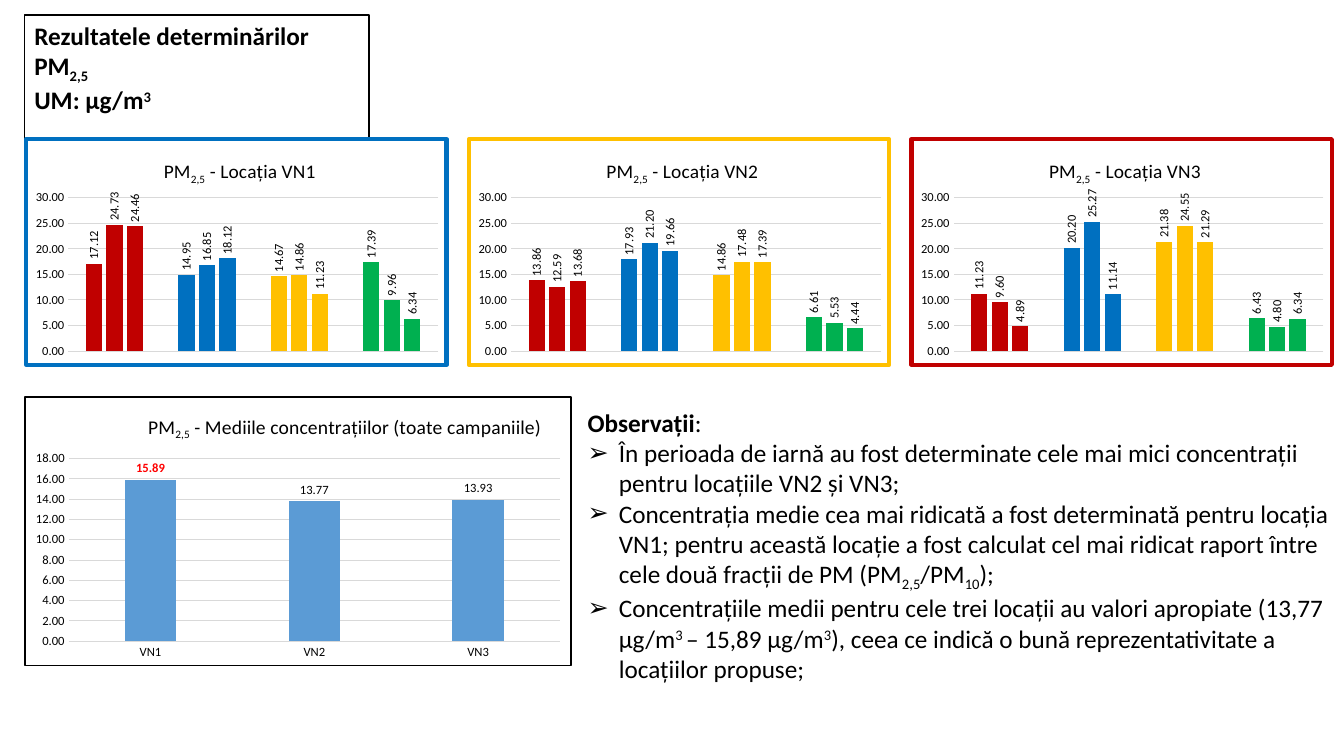
from lxml import etree
from pptx import Presentation
from pptx.chart.data import CategoryChartData
from pptx.dml.color import RGBColor
from pptx.enum import chart as charts, text
from pptx.oxml import parse_xml
from pptx.oxml.ns import nsdecls, qn
from pptx.util import Inches, Pt

BLACK, WHITE, GRID = "000000", "FFFFFF", "D9D9D9"
RED, BLUE, YELLOW, GREEN = CAMPAIGN_COLOURS = ("C00000", "0070C0", "FFC000", "00B050")
BAR = "5B9BD5"
SUB, SUPER = -25, 30
PM25 = ["PM", ("2,5", SUB)]


def colour(value):
    return RGBColor.from_string(value)


def format_font(font, size=18, bold=False, color=BLACK, name="Calibri"):
    font.size, font.bold, font.name = Pt(size), bold, name
    font.color.rgb = colour(color)


def write(para, parts, **style):
    """Add spans to a paragraph; a part is text or (text, baseline percent)."""
    for part in parts:
        words, baseline = (part, 0) if isinstance(part, str) else part
        span = para.add_run()
        span.text = words
        format_font(span.font, **style)
        if baseline:
            span._r.get_or_add_rPr().set("baseline", str(baseline * 1000))


def place(parent, before, **fractions):
    """Give a chart part a manual layout, in fractions of the chart."""
    for old in parent.findall(qn("c:layout")):
        parent.remove(old)
    layout = parse_xml(f"<c:layout {nsdecls('c')}><c:manualLayout/></c:layout>")
    settings = {"xMode": "edge", "yMode": "edge", **fractions}
    if "w" in fractions:
        settings = {"layoutTarget": "inner", **settings}
    for tag, value in settings.items():
        etree.SubElement(layout[0], qn(f"c:{tag}")).set("val", str(value))
    if before is None:
        parent.insert(0, layout)
    else:
        before.addnext(layout)


class Slide:
    def __init__(self, deck):
        self.page = deck.slides.add_slide(deck.slide_layouts[5])

    def title(self, bounds, lines):
        box = self.page.shapes.title
        box.left, box.top, box.width, box.height = map(Inches, bounds)
        box.fill.solid()
        box.fill.fore_color.rgb = colour(WHITE)
        box.line.color.rgb = colour(BLACK)
        box.line.width = Pt(1)
        self.fill_frame(box.text_frame, lines, bold=True)

    def fill_frame(self, frame, lines, **style):
        frame.word_wrap = True
        frame.auto_size = text.MSO_AUTO_SIZE.SHAPE_TO_FIT_TEXT
        frame.vertical_anchor = text.MSO_ANCHOR.TOP
        for index, parts in enumerate(lines):
            para = frame.add_paragraph() if index else frame.paragraphs[0]
            para.alignment = text.PP_ALIGN.LEFT
            write(para, parts, **style)

    def bullet_box(self, bounds, heading, items):
        box = self.page.shapes.add_textbox(*map(Inches, bounds))
        self.fill_frame(box.text_frame, [[], *items])
        first, *bullets = box.text_frame.paragraphs
        write(first, [heading], bold=True)
        write(first, [":"])
        for para in bullets:
            props = para._p.get_or_add_pPr()
            props.set("marL", str(Inches(0.31)))
            props.set("indent", str(-Inches(0.31)))
            etree.SubElement(props, qn("a:buFont")).set("typeface", "Calibri")
            etree.SubElement(props, qn("a:buChar")).set("char", "➢")

    def column_chart(self, bounds, title, categories, rows, border, border_width,
                     title_at, plot_at, top, step):
        data = CategoryChartData(number_format="0.00")
        data.categories = categories
        for number, row in enumerate(rows, 1):
            data.add_series(f"Series {number}", row)
        frame = self.page.shapes.add_chart(
            charts.XL_CHART_TYPE.COLUMN_CLUSTERED, *map(Inches, bounds), data)
        chart = frame.chart
        format_font(chart.font, size=10)
        chart.has_legend = False
        write(chart.chart_title.text_frame.paragraphs[0], title, size=14)
        chart.chart_title.include_in_layout = False

        plot = chart.plots[0]
        plot.gap_width, plot.overlap, plot.vary_by_categories = 219, -27, False
        for series in plot.series:
            series.format.fill.solid()
            series.format.fill.fore_color.rgb = colour(BAR)
            labels = series.data_labels
            labels.show_value = True
            labels.number_format, labels.number_format_is_linked = "#,##0.00", False
            labels.position = charts.XL_LABEL_POSITION.OUTSIDE_END
            format_font(labels.font, size=9)

        for axis in (chart.category_axis, chart.value_axis):
            axis.major_tick_mark = axis.minor_tick_mark = charts.XL_TICK_MARK.NONE
            format_font(axis.tick_labels.font, size=9)
        values = chart.value_axis
        values.minimum_scale, values.maximum_scale, values.major_unit = 0, top, step
        values.tick_labels.number_format = "0.00"
        values.tick_labels.number_format_is_linked = False
        values.format.line.fill.background()
        for line in (values.major_gridlines.format.line, chart.category_axis.format.line):
            line.color.rgb = colour(GRID)
            line.width = Pt(0.75)

        body = chart.element.find(qn("c:chart"))
        heading = body.find(qn("c:title"))
        place(heading, heading.find(qn("c:tx")), **dict(zip("xy", title_at)))
        place(body.find(qn("c:plotArea")), None, **dict(zip("xywh", plot_at)))
        body.addnext(parse_xml(
            f'<c:spPr {nsdecls("c", "a")}>'
            f'<a:solidFill><a:srgbClr val="{WHITE}"/></a:solidFill>'
            f'<a:ln w="{Pt(border_width)}"><a:solidFill><a:srgbClr val="{border}"/>'
            '</a:solidFill></a:ln></c:spPr>'))
        return chart

    def campaign_chart(self, bounds, location, rows, border):
        """Chart of one location: a colour per campaign and upright labels."""
        chart = self.column_chart(
            bounds, [*PM25, f" - Locația {location}"], ["1", "2", "3", "4"], rows,
            border, 3, (0.32, 0.07), (0.1, 0.26, 0.88, 0.68), top=30, step=5)
        chart.category_axis.visible = False
        for series in chart.plots[0].series:
            for index, shade in enumerate(CAMPAIGN_COLOURS):
                fill = series.points[index].format.fill
                fill.solid()
                fill.fore_color.rgb = colour(shade)
        for body in chart.element.xpath(".//c:dLbls/c:txPr/a:bodyPr"):
            body.set("rot", "-5400000")
            body.set("vert", "horz")

    def mean_chart(self, bounds, locations, means):
        chart = self.column_chart(
            bounds, [*PM25, " - Mediile concentrațiilor (toate campaniile)"],
            locations, [means], BLACK, 1, (0.22, 0.05), (0.08, 0.23, 0.9, 0.68),
            top=18, step=2)
        highest = chart.plots[0].series[0].points[means.index(max(means))].data_label
        format_font(highest.font, size=9, bold=True, color="FF0000")
        highest.position = charts.XL_LABEL_POSITION.OUTSIDE_END


LOCATIONS = {
    "VN1": (BLUE, [(17.12, 14.95, 14.67, 17.39), (24.73, 16.85, 14.86, 9.96),
                   (24.46, 18.12, 11.23, 6.34)]),
    "VN2": (YELLOW, [(13.86, 17.93, 14.86, 6.61), (12.59, 21.2, 17.48, 5.53),
                     (13.68, 19.66, 17.39, 4.44)]),
    "VN3": (RED, [(11.23, 20.2, 21.38, 6.43), (9.6, 25.27, 24.55, 4.8),
                  (4.89, 11.14, 21.29, 6.34)]),
}
OBSERVATIONS = [
    ["În perioada de iarnă au fost determinate cele mai mici concentrații pentru "
     "locațiile VN2 și VN3;"],
    ["Concentrația medie cea mai ridicată a fost determinată pentru locația VN1; pentru "
     "această locație a fost calculat cel mai ridicat raport între cele două fracții de "
     "PM (PM", ("2,5", SUB), "/PM", ("10", SUB), ");"],
    ["Concentrațiile medii pentru cele trei locații au valori apropiate (13,77 µg/m",
     ("3 ", SUPER), "– 15,89 µg/m", ("3", SUPER),
     "), ceea ce indică o bună reprezentativitate a locațiilor propuse;"],
]


def main():
    deck = Presentation()
    deck.slide_width, deck.slide_height = Inches(13.33), Inches(7.5)
    slide = Slide(deck)
    slide.title((0.24, 0.15, 3.42, 1.01),
                [["Rezultatele determinărilor"], PM25, ["UM: µg/m", ("3", SUPER)]])
    for column, (location, (border, rows)) in enumerate(LOCATIONS.items()):
        slide.campaign_chart((0.24 + 4.39 * column, 1.36, 4.21, 2.28),
                             location, rows, border)
    slide.mean_chart((0.24, 3.93, 5.43, 2.68), list(LOCATIONS), [15.89, 13.77, 13.93])
    slide.bullet_box((5.73, 3.99, 7.6, 2.83), "Observații", OBSERVATIONS)
    deck.save("out.pptx")


if __name__ == "__main__":
    main()
